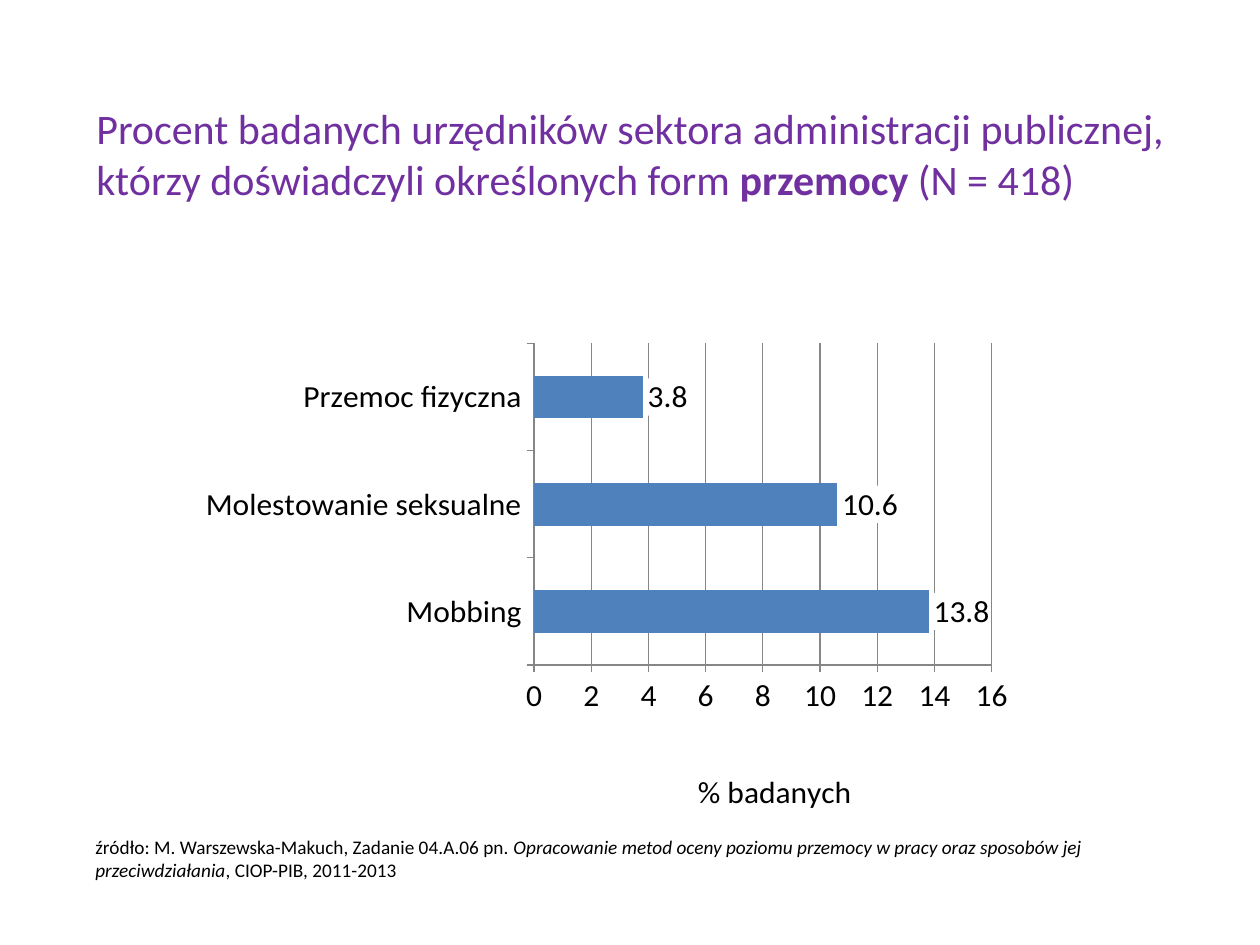
import pptx
import pptx.chart.data
import pptx.dml.color
import pptx.enum.chart
import pptx.enum.text
import pptx.oxml
import pptx.oxml.ns
import pptx.util

PX = 914400 // 126
FONT = "Calibri"
PURPLE = pptx.dml.color.RGBColor(0x70, 0x30, 0xA0)
BLACK = pptx.dml.color.RGBColor(0, 0, 0)
BLUE = pptx.dml.color.RGBColor(0x4F, 0x81, 0xBD)
GRAY = pptx.dml.color.RGBColor(0x86, 0x86, 0x86)
NS = pptx.oxml.ns.nsdecls("c", "a")
qn = pptx.oxml.ns.qn


def px(n):
    return pptx.util.Emu(n * PX)


def set_font(font, size, color, bold=False, italic=False):
    font.name = FONT
    font.size = pptx.util.Pt(size)
    font.bold = bold
    font.italic = italic
    font.color.rgb = color


def add_text(s, box, runs, size, color, anchor="TOP", bottom=6):
    """Add one paragraph; runs are (text, style) pairs, style holding b or i."""
    tf = s.shapes.add_textbox(*map(px, box)).text_frame
    tf.word_wrap = True
    tf.vertical_anchor = pptx.enum.text.MSO_ANCHOR[anchor]
    tf.margin_bottom = px(bottom)
    p = tf.paragraphs[0]
    for text, style in runs:
        r = p.add_run()
        r.text = text
        set_font(r.font, size, color, "b" in style, "i" in style)


def set_layout(parent, index, mode, **values):
    """Place a chart part by fractions of the chart's box."""
    for old in parent.findall(qn("c:layout")):
        parent.remove(old)
    target = '<c:layoutTarget val="inner"/>' if mode == "inner" else ""
    sides = "".join(f'<c:{k}Mode val="edge"/>' for k in "xy")
    sizes = "".join(f'<c:{k} val="{v}"/>' for k, v in values.items())
    parent.insert(index, pptx.oxml.parse_xml(
        f"<c:layout {NS}><c:manualLayout>{target}{sides}{sizes}"
        "</c:manualLayout></c:layout>"))


def add_bars(s, box):
    data = pptx.chart.data.CategoryChartData()
    data.categories = ["Mobbing", "Molestowanie seksualne", "Przemoc fizyczna"]
    data.add_series("Series 1", [13.8, 10.6, 3.8])
    kind = pptx.enum.chart.XL_CHART_TYPE.BAR_CLUSTERED
    chart = s.shapes.add_chart(kind, *map(px, box), data).chart
    chart.has_legend = False
    chart.has_title = False
    set_font(chart.font, 18, BLACK)

    plot = chart.plots[0]
    plot.gap_width = 150
    plot.vary_by_categories = False
    series = plot.series[0]
    series.format.fill.solid()
    series.format.fill.fore_color.rgb = BLUE
    labels = series.data_labels
    labels.show_value = True
    labels.position = pptx.enum.chart.XL_LABEL_POSITION.OUTSIDE_END
    set_font(labels.font, 18, BLACK)
    tx_pr = series.format.fill and labels.font and labels._element.find(qn("c:txPr"))
    tx_pr.addprevious(pptx.oxml.parse_xml(
        f'<c:spPr {NS}><a:solidFill><a:srgbClr val="FFFFFF"/></a:solidFill></c:spPr>'))

    values = chart.value_axis
    values.minimum_scale, values.maximum_scale, values.major_unit = 0, 16, 2
    values.has_major_gridlines = True
    for line in (values.major_gridlines.format.line, values.format.line,
                 chart.category_axis.format.line):
        line.color.rgb = GRAY
        line.width = pptx.util.Pt(0.75)
    for axis in (values, chart.category_axis):
        axis.major_tick_mark = pptx.enum.chart.XL_TICK_MARK.OUTSIDE
        set_font(axis.tick_labels.font, 18, BLACK)

    title = values.axis_title
    r = title.text_frame.paragraphs[0].add_run()
    r.text = "% badanych"
    set_font(r.font, 18, BLACK)
    set_layout(title._element, 1, "edge", x=0.6, y=0.91)
    plot_area = chart._chartSpace.find(".//" + qn("c:plotArea"))
    set_layout(plot_area, 0, "inner", x=0.41, y=0.02, w=0.55, h=0.68)


def main():
    prs = pptx.Presentation()
    prs.slide_width, prs.slide_height = pptx.util.Inches(10), pptx.util.Inches(7.5)
    s = prs.slides.add_slide(prs.slide_layouts[6])
    add_text(s, (84, 86, 1134, 158), [
        ("Procent badanych urzędników sektora administracji publicznej, "
         "którzy doświadczyli określonych form ", ""),
        ("przemocy ", "b"),
        ("(N = 418)", ""),
    ], 24, PURPLE, anchor="MIDDLE", bottom=30)
    add_bars(s, (193, 334, 832, 486))
    add_text(s, (83, 829, 1101, 59), [
        ("źródło: M. Warszewska-Makuch, Zadanie 04.A.06 pn. ", ""),
        ("Opracowanie metod oceny poziomu przemocy w pracy oraz sposobów jej "
         "przeciwdziałania", "i"),
        (", CIOP-PIB, 2011-2013", ""),
    ], 11, BLACK)
    prs.save("out.pptx")


if __name__ == "__main__":
    main()
